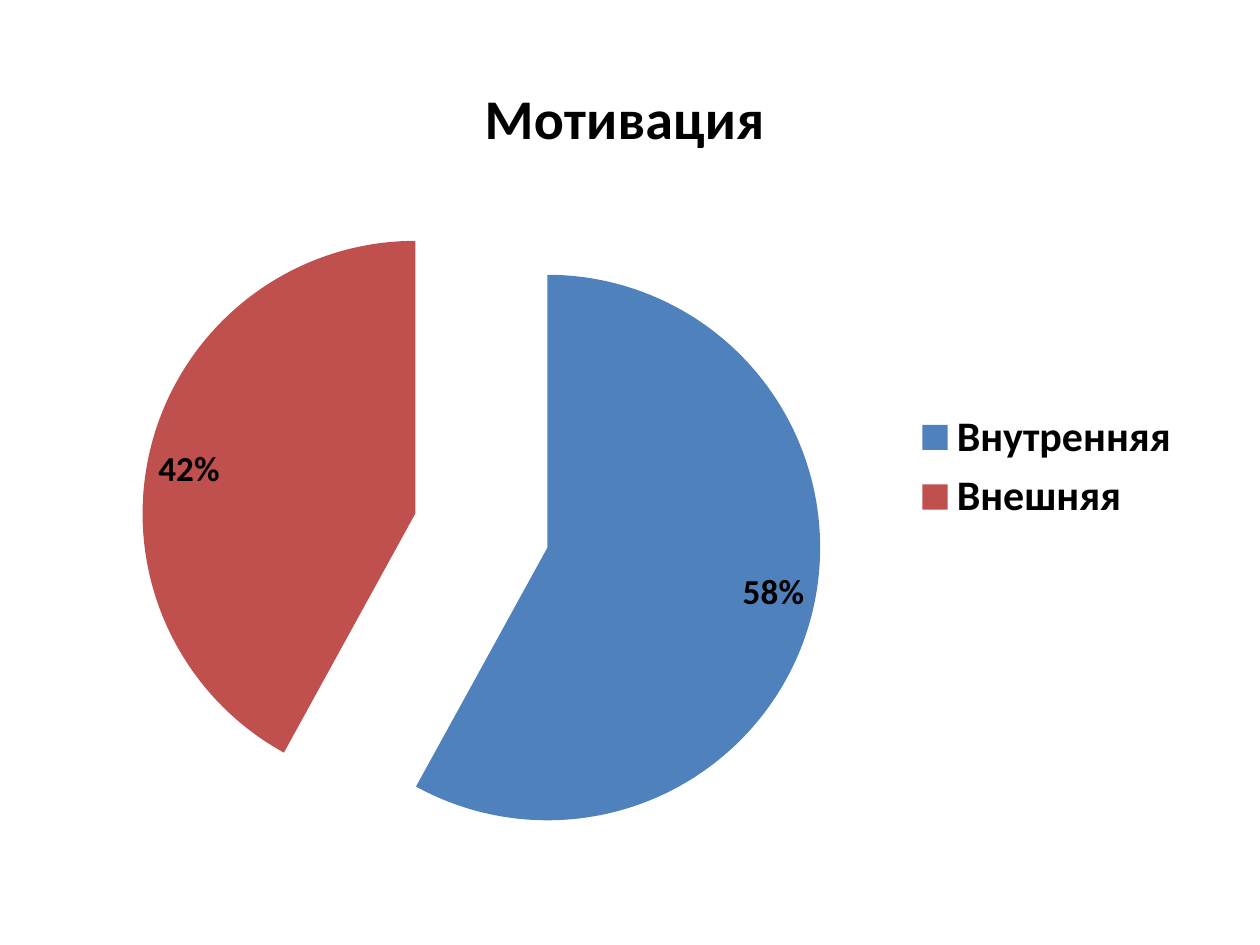
from lxml import etree
from pptx import Presentation
from pptx.chart.data import CategoryChartData
from pptx.dml.color import RGBColor
from pptx.enum.chart import XL_CHART_TYPE as ChartType
from pptx.enum.chart import XL_LABEL_POSITION as LabelPosition
from pptx.enum.chart import XL_LEGEND_POSITION as LegendPosition
from pptx.oxml.ns import qn
from pptx.util import Pt

COLORS = {"text": "000000", "Внутренняя": "4F81BD", "Внешняя": "C0504D"}
SHARES = {"Внутренняя": 0.58, "Внешняя": 0.42}
TITLE = "Мотивация"
FONT = "Calibri"
EXPLOSION = 25


def style_font(font, size, bold=True):
    font.name = FONT
    font.size = Pt(size)
    font.bold = bold
    font.color.rgb = RGBColor.from_string(COLORS["text"])


def explode(series, percent):
    explosion = etree.Element(qn("c:explosion"), val=str(percent))
    series._element.find(qn("c:tx")).addnext(explosion)


def add_motivation_pie(slide, left, top, width, height):
    data = CategoryChartData(number_format="0%")
    data.categories = list(SHARES)
    data.add_series(TITLE, list(SHARES.values()))
    chart = slide.shapes.add_chart(
        ChartType.PIE, Pt(left), Pt(top), Pt(width), Pt(height), data
    ).chart
    style_font(chart.font, 10, bold=False)

    chart.has_title = True
    title = chart.chart_title.text_frame
    title.text = TITLE
    style_font(title.paragraphs[0].font, 32)
    chart.chart_title.include_in_layout = False

    chart.has_legend = True
    chart.legend.position = LegendPosition.RIGHT
    chart.legend.include_in_layout = False
    style_font(chart.legend.font, 24)

    plot = chart.plots[0]
    plot.vary_by_categories = True
    series = plot.series[0]
    explode(series, EXPLOSION)
    for index, category in enumerate(SHARES):
        fill = series.points[index].format.fill
        fill.solid()
        fill.fore_color.rgb = RGBColor.from_string(COLORS[category])

    labels = series.data_labels
    labels.show_value = True
    labels.show_percentage = False
    labels.number_format = "0%"
    labels.number_format_is_linked = False
    labels.position = LabelPosition.INSIDE_END
    style_font(labels.font, 20)


def main():
    presentation = Presentation()
    presentation.slide_width = Pt(720)
    presentation.slide_height = Pt(540)
    slide = presentation.slides.add_slide(presentation.slide_layouts[6])
    add_motivation_pie(slide, 31, 26, 652, 482)
    presentation.save("out.pptx")


if __name__ == "__main__":
    main()
